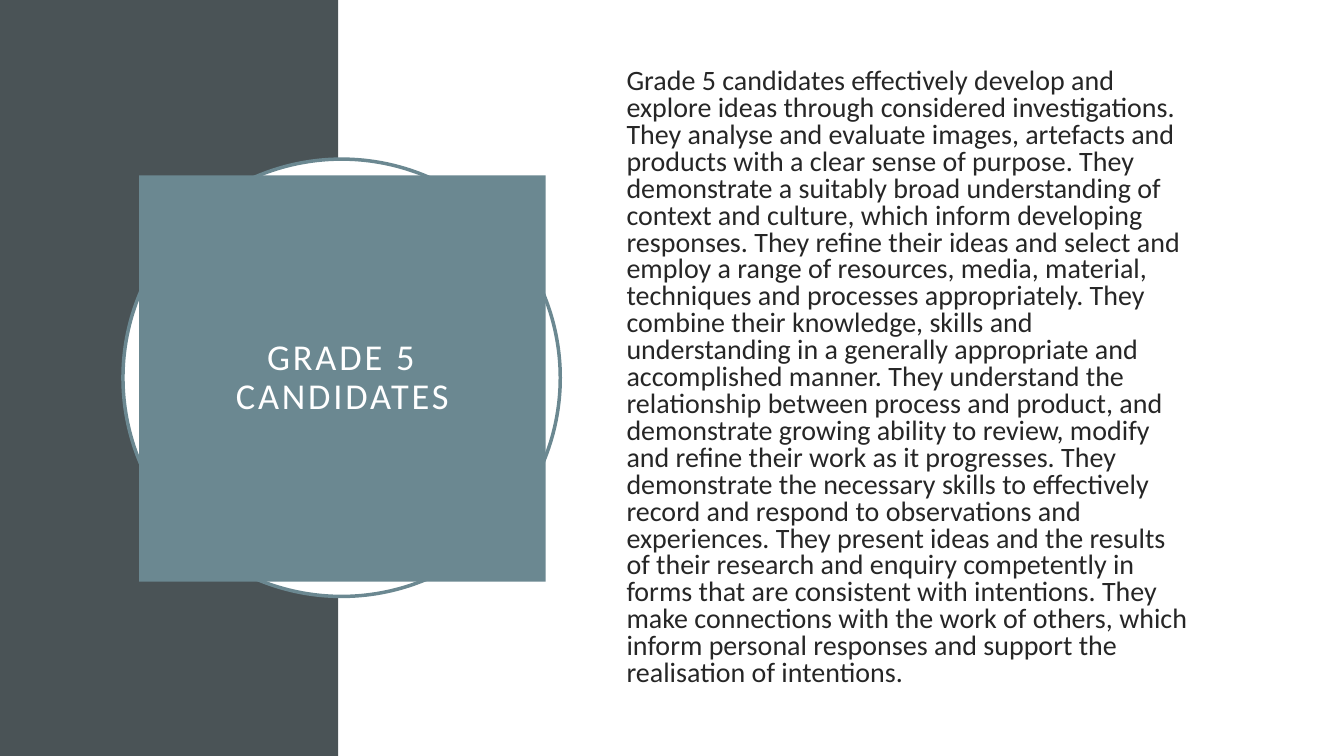
import dataclasses
import typing

import pptx
import pptx.dml.color
import pptx.enum.shapes
import pptx.enum.text
import pptx.util

Cm = pptx.util.Cm
Pt = pptx.util.Pt
SHAPES = pptx.enum.shapes.MSO_SHAPE
ALIGN = pptx.enum.text.PP_ALIGN

COLORS = {"slate": "4A5356", "teal": "6B8891", "white": "FFFFFF", "ink": "262626"}
SLIDE_WIDTH = 33.87
SLIDE_HEIGHT = 19.05
SIDEBAR_WIDTH = 8.53

TITLE = "GRADE 5 CANDIDATES"
DESCRIPTION_SENTENCES = [
    "Grade 5 candidates effectively develop and explore ideas through considered investigations.",
    "They analyse and evaluate images, artefacts and products with a clear sense of purpose.",
    "They demonstrate a suitably broad understanding of context and culture, "
    "which inform developing responses.",
    "They refine their ideas and select and employ a range of resources, media, material, "
    "techniques and processes appropriately.",
    "They combine their knowledge, skills and understanding in a generally appropriate "
    "and accomplished manner.",
    "They understand the relationship between process and product, and demonstrate growing "
    "ability to review, modify and refine their work as it progresses.",
    "They demonstrate the necessary skills to effectively record and respond to observations "
    "and experiences.",
    "They present ideas and the results of their research and enquiry competently in forms "
    "that are consistent with intentions.",
    "They make connections with the work of others, which inform personal responses "
    "and support the realisation of intentions.",
]


@dataclasses.dataclass(frozen=True)
class Panel:
    kind: SHAPES
    left: float
    top: float
    width: float
    height: float
    fill: str
    outline: typing.Optional[str] = None


@dataclasses.dataclass(frozen=True)
class TextStyle:
    size: float
    color: str
    alignment: ALIGN
    line_spacing: float
    space_before: float = 0
    letter_spacing: float = 0


SIDEBAR = Panel(SHAPES.RECTANGLE, 0, 0, SIDEBAR_WIDTH, SLIDE_HEIGHT, "slate")
CONTENT = Panel(SHAPES.RECTANGLE, SIDEBAR_WIDTH, 0, SLIDE_WIDTH - SIDEBAR_WIDTH, SLIDE_HEIGHT, "white")
RING = Panel(SHAPES.OVAL, 3.1, 4.01, 11.02, 11.02, "white", "teal")
TITLE_SQUARE = Panel(SHAPES.RECTANGLE, 3.51, 4.42, 10.24, 10.24, "teal")

TITLE_STYLE = TextStyle(26, "white", ALIGN.CENTER, 0.9, letter_spacing=2)
BODY_STYLE = TextStyle(20, "ink", ALIGN.LEFT, 0.8, space_before=10)


def rgb(name: str) -> pptx.dml.color.RGBColor:
    return pptx.dml.color.RGBColor.from_string(COLORS[name])


def draw_panel(slide: pptx.slide.Slide, panel: Panel) -> pptx.shapes.autoshape.Shape:
    shape = slide.shapes.add_shape(
        panel.kind, Cm(panel.left), Cm(panel.top), Cm(panel.width), Cm(panel.height)
    )
    shape.shadow.inherit = False
    shape.fill.solid()
    shape.fill.fore_color.rgb = rgb(panel.fill)
    if panel.outline:
        shape.line.color.rgb = rgb(panel.outline)
        shape.line.width = Pt(2.5)
    else:
        shape.line.fill.background()
    return shape


def write_text(shape: pptx.shapes.autoshape.Shape, text: str, style: TextStyle) -> None:
    frame = shape.text_frame
    frame.word_wrap = True
    frame.vertical_anchor = pptx.enum.text.MSO_ANCHOR.MIDDLE
    paragraph = frame.paragraphs[0]
    paragraph.alignment = style.alignment
    paragraph.line_spacing = style.line_spacing
    paragraph.space_before = Pt(style.space_before)
    paragraph.font.name = "Calibri"
    paragraph.font.size = Pt(style.size)
    paragraph.font.color.rgb = rgb(style.color)
    run = paragraph.add_run()
    run.text = text
    if style.letter_spacing:
        run._r.get_or_add_rPr().set("spc", str(round(style.letter_spacing * 100)))


def main() -> None:
    presentation = pptx.Presentation()
    presentation.slide_width = Cm(SLIDE_WIDTH)
    presentation.slide_height = Cm(SLIDE_HEIGHT)
    slide = presentation.slides.add_slide(presentation.slide_layouts[6])

    for panel in (SIDEBAR, CONTENT, RING):
        draw_panel(slide, panel)

    title = draw_panel(slide, TITLE_SQUARE)
    title.text_frame.margin_left = title.text_frame.margin_right = Cm(2)
    write_text(title, TITLE, TITLE_STYLE)

    body = slide.shapes.add_textbox(Cm(15.54), Cm(0.84), Cm(14.78), Cm(17.4))
    write_text(body, " ".join(DESCRIPTION_SENTENCES), BODY_STYLE)

    presentation.save("out.pptx")


if __name__ == "__main__":
    main()
